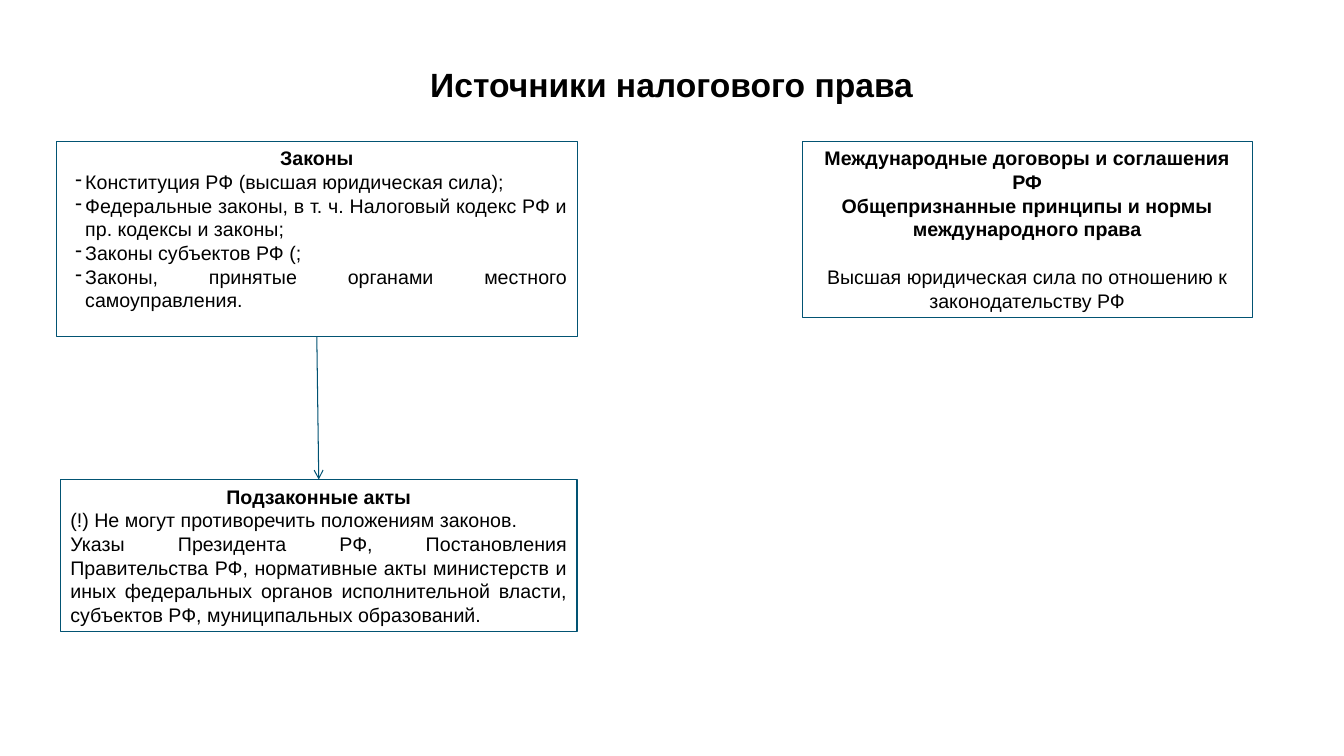
from lxml.etree import SubElement
from pptx import Presentation
from pptx.dml.color import RGBColor
from pptx.enum.shapes import MSO_CONNECTOR, MSO_SHAPE
from pptx.enum.text import MSO_ANCHOR, PP_ALIGN
from pptx.oxml.ns import qn
from pptx.util import Pt


def color(value):
    return RGBColor.from_string(value)


class SourcesPage:
    font = "Arial"
    ink = "000000"
    border = "025373"
    arrow_color = "005272"
    line_width = 0.75
    text_size = 14
    title_size = 24
    line_ratio = 1.21

    def __init__(self, deck):
        self.page = deck.slides.add_slide(deck.slide_layouts[6])

    def add_rows(self, box, rows, size):
        """Each row is (text, bold, alignment, bulleted, space before)."""
        frame = box.text_frame
        frame.word_wrap = True
        frame.vertical_anchor = MSO_ANCHOR.TOP
        for index, (text, bold, alignment, bulleted, gap) in enumerate(rows):
            para = frame.add_paragraph() if index else frame.paragraphs[0]
            para.alignment = alignment
            para.line_spacing = Pt(size * self.line_ratio)
            if gap:
                para.space_before = Pt(gap)
            if bulleted:
                self.bullet(para)
            span = para.add_run()
            span.text = text
            span.font.name = self.font
            span.font.size = Pt(size)
            span.font.bold = bold
            span.font.color.rgb = color(self.ink)

    def bullet(self, para):
        properties = para._p.get_or_add_pPr()
        properties.set("marL", str(Pt(13.5)))
        properties.set("indent", str(Pt(-7)))
        SubElement(properties, qn("a:buChar")).set("char", "-")

    def title(self, left, top, width, height, text):
        box = self.page.shapes.add_textbox(Pt(left), Pt(top), Pt(width), Pt(height))
        self.add_rows(box, [heading(text)], self.title_size)

    def panel(self, left, top, width, height, rows):
        box = self.page.shapes.add_shape(
            MSO_SHAPE.RECTANGLE, Pt(left), Pt(top), Pt(width), Pt(height))
        box.shadow.inherit = False
        box.fill.background()
        box.line.color.rgb = color(self.border)
        box.line.width = Pt(self.line_width)
        self.add_rows(box, rows, self.text_size)
        return box

    def arrow_down(self, upper, lower):
        arrow = self.page.shapes.add_connector(MSO_CONNECTOR.STRAIGHT, 0, 0, 0, 0)
        arrow.begin_connect(upper, 2)
        arrow.end_connect(lower, 0)
        arrow.line.color.rgb = color(self.arrow_color)
        arrow.line.width = Pt(self.line_width)
        properties = arrow._element.spPr
        SubElement(properties.find(qn("a:ln")), qn("a:tailEnd")).set("type", "arrow")
        SubElement(properties, qn("a:effectLst"))


def heading(text):
    return text, True, PP_ALIGN.CENTER, False, 0


def body(text, bulleted=False):
    return text, False, PP_ALIGN.JUSTIFY, bulleted, 0


def main():
    deck = Presentation()
    deck.slide_width, deck.slide_height = Pt(960), Pt(540)
    page = SourcesPage(deck)

    # Laws
    law_items = [
        "Конституция РФ (высшая юридическая сила);",
        "Федеральные законы, в т. ч. Налоговый кодекс РФ и пр. кодексы и законы;",
        "Законы субъектов РФ (;",
        "Законы, принятые органами местного самоуправления.",
    ]
    laws = page.panel(40.3, 100.8, 372, 139.5,
                      [heading("Законы")] + [body(item, True) for item in law_items])

    # Subordinate acts
    acts = page.panel(43.2, 342.5, 369, 108.5, [
        heading("Подзаконные акты"),
        body("(!) Не могут противоречить положениям законов."),
        body("Указы Президента РФ, Постановления Правительства РФ, нормативные акты "
             "министерств и иных федеральных органов исполнительной власти, "
             "субъектов РФ, муниципальных образований."),
    ])
    page.arrow_down(laws, acts)

    # International treaties
    page.panel(573, 100.8, 321.5, 126, [
        heading("Международные договоры и соглашения РФ"),
        heading("Общепризнанные принципы и нормы международного права"),
        ("Высшая юридическая сила по отношению к законодательству РФ",
         False, PP_ALIGN.CENTER, False, 17),
    ])

    # Title
    page.title(236, 41.8, 487.5, 36, "Источники налогового права")

    deck.save("out.pptx")


if __name__ == "__main__":
    main()
